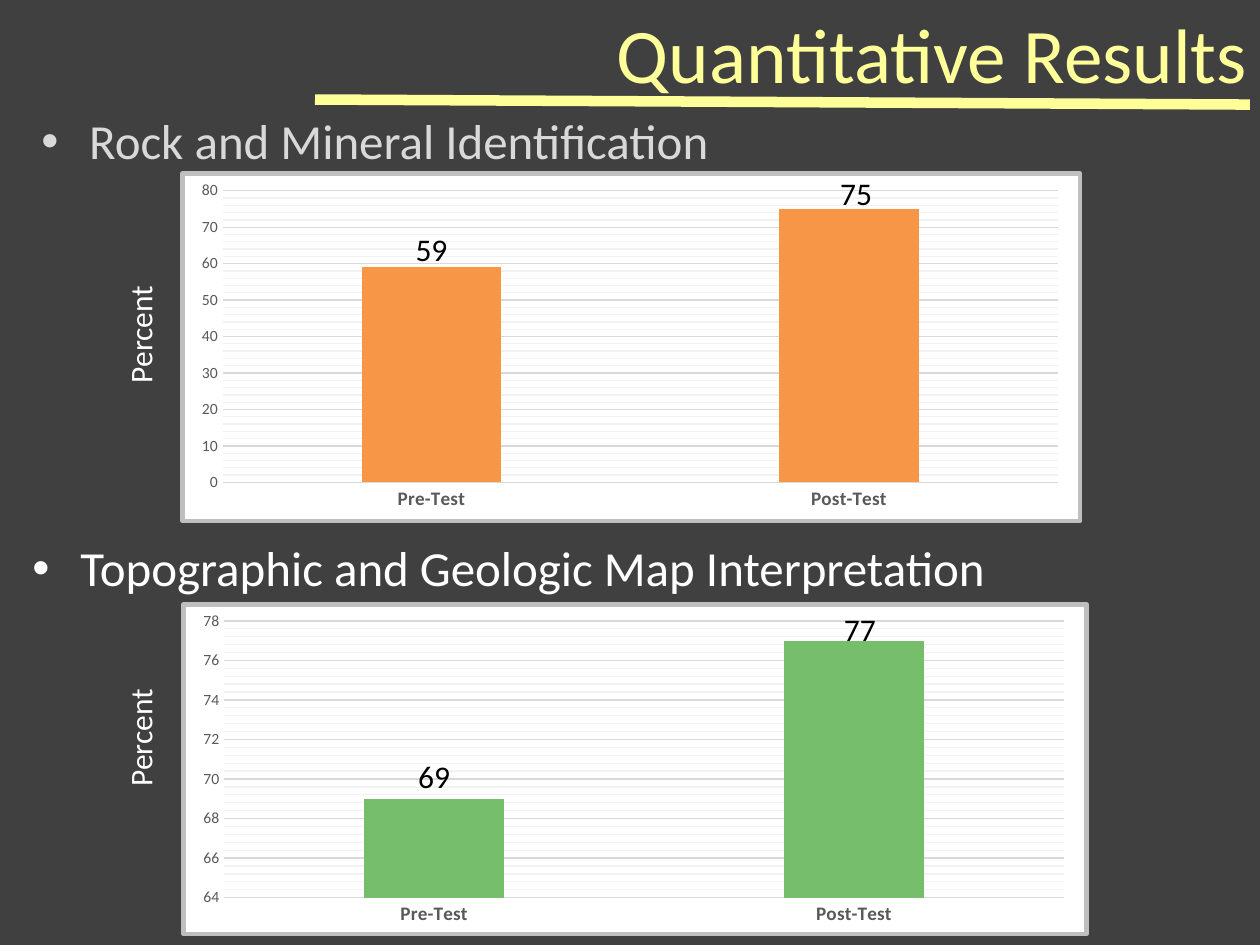
from lxml import etree
from pptx import Presentation, util as u
from pptx.chart.data import CategoryChartData
from pptx.dml.color import RGBColor
from pptx.enum import chart as ch, shapes, text
from pptx.oxml import parse_xml
from pptx.oxml.ns import nsdecls, qn

CHARCOAL = RGBColor(0x40, 0x40, 0x40)
YELLOW = RGBColor(0xFF, 0xFF, 0x99)
WHITE = RGBColor(0xFF, 0xFF, 0xFF)
BLACK = RGBColor(0, 0, 0)
LIGHT_GREY = RGBColor(0xD9, 0xD9, 0xD9)
PALE_GREY = RGBColor(0xF2, 0xF2, 0xF2)
FRAME_GREY = RGBColor(0xBF, 0xBF, 0xBF)
AXIS_GREY = RGBColor(0x59, 0x59, 0x59)
ORANGE = RGBColor(0xF7, 0x96, 0x46)
GREEN = RGBColor(0x76, 0xBE, 0x6C)

COLUMNS, ROWS = 100, 75
CATEGORIES = ("Pre-Test", "Post-Test")
PLOT_SHARES = {"x": 0.045, "y": 0.05, "w": 0.93, "h": 0.84}


def chart_part_style(line_color, line_width, fill=""):
    """Returns a c:spPr element with an outline and an optional fill."""
    return parse_xml(
        f'<c:spPr {nsdecls("c", "a")}>{fill}<a:ln w="{u.Pt(line_width)}">'
        f'<a:solidFill><a:srgbClr val="{line_color}"/></a:solidFill>'
        '</a:ln></c:spPr>')


class ResultsSlide:
    """Builds one slide; every box is (column, row, columns wide, rows high)."""

    font = "Calibri"

    def __init__(self, deck):
        self.cell_w = deck.slide_width / COLUMNS
        self.cell_h = deck.slide_height / ROWS
        self.slide = deck.slides.add_slide(deck.slide_layouts[6])
        backdrop = self.slide.background.fill
        backdrop.solid()
        backdrop.fore_color.rgb = CHARCOAL

    def place(self, *box):
        return [u.Emu(round(value * (self.cell_h if i % 2 else self.cell_w)))
                for i, value in enumerate(box)]

    def set_font(self, font, size, color, bold=False):
        font.name, font.size, font.bold = self.font, u.Pt(size), bold
        font.color.rgb = color

    def words(self, box, wording, size, color, wrap=True):
        """Adds a one-paragraph text box; returns its frame and paragraph."""
        frame = self.slide.shapes.add_textbox(*self.place(*box)).text_frame
        frame.word_wrap = wrap
        if not wrap:
            frame.auto_size = text.MSO_AUTO_SIZE.SHAPE_TO_FIT_TEXT
        paragraph = frame.paragraphs[0]
        run = paragraph.add_run()
        run.text = wording
        self.set_font(run.font, size, color)
        return frame, paragraph

    def title(self, box, wording):
        frame, paragraph = self.words(box, wording, 44.1, YELLOW)
        frame.vertical_anchor = text.MSO_ANCHOR.MIDDLE
        paragraph.alignment = text.PP_ALIGN.RIGHT

    def bullet(self, box, wording, color):
        _, paragraph = self.words(box, wording, 28, color)
        paragraph.space_before = u.Pt(5.6)
        props = paragraph._p.get_or_add_pPr()
        props.set("marL", str(u.Inches(0.38)))
        props.set("indent", str(-u.Inches(0.38)))
        etree.SubElement(props, qn("a:buFont")).set("typeface", "Arial")
        etree.SubElement(props, qn("a:buChar")).set("char", "•")

    def axis_caption(self, box, wording):
        frame, _ = self.words(box, wording, 18, WHITE, wrap=False)
        frame._txBody.bodyPr.set("vert", "vert270")

    def value_label(self, box, value):
        self.words(box, str(value), 18, BLACK, wrap=False)

    def rule(self, start, end):
        line = self.slide.shapes.add_connector(
            shapes.MSO_CONNECTOR.STRAIGHT, *self.place(*start, *end))
        line.line.color.rgb = YELLOW
        line.line.width = u.Pt(6)
        etree.SubElement(line._element.spPr, qn("a:effectLst"))

    def column_chart(self, box, values, color, low, high, step):
        data = CategoryChartData()
        data.categories = CATEGORIES
        data.add_series("Series 1", values)
        chart = self.slide.shapes.add_chart(
            ch.XL_CHART_TYPE.COLUMN_CLUSTERED, *self.place(*box), data).chart
        chart.has_legend = chart.has_title = False
        self.set_font(chart.font, 10, BLACK)

        plot = chart.plots[0]
        plot.gap_width = 199
        plot.vary_by_categories = False
        bars = plot.series[0].format.fill
        bars.solid()
        bars.fore_color.rgb = color

        scale, names = chart.value_axis, chart.category_axis
        scale.minimum_scale, scale.maximum_scale = low, high
        scale.major_unit, scale.minor_unit = step, step / 5
        scale.has_major_gridlines = scale.has_minor_gridlines = True
        for axis in (scale, names):
            axis.major_tick_mark = axis.minor_tick_mark = ch.XL_TICK_MARK.NONE
        for part in (scale.major_gridlines, names):
            part.format.line.color.rgb = LIGHT_GREY
            part.format.line.width = u.Pt(0.75)
        scale.format.line.fill.background()
        self.set_font(scale.tick_labels.font, 9, AXIS_GREY)
        self.set_font(names.tick_labels.font, 11, AXIS_GREY, bold=True)
        self.frame_chart(chart)

    def frame_chart(self, chart):
        """Styles what has no public method: minor grid, plot area and border."""
        body = chart.element.find(qn("c:chart"))
        area = body.find(qn("c:plotArea"))
        minor_grid = next(area.iter(qn("c:minorGridlines")))
        minor_grid.append(chart_part_style(PALE_GREY, 0.75))

        for layout in area.findall(qn("c:layout")):
            area.remove(layout)
        modes = "".join(f'<c:{side}Mode val="edge"/>' for side in "xy")
        shares = "".join(f'<c:{side} val="{share}"/>'
                         for side, share in PLOT_SHARES.items())
        area.insert(0, parse_xml(
            f'<c:layout {nsdecls("c")}><c:manualLayout>'
            f'<c:layoutTarget val="inner"/>{modes}{shares}'
            '</c:manualLayout></c:layout>'))
        back = f'<a:solidFill><a:srgbClr val="{WHITE}"/></a:solidFill>'
        body.addnext(chart_part_style(FRAME_GREY, 2.5, back))


def main():
    deck = Presentation()
    deck.slide_width, deck.slide_height = u.Inches(10), u.Inches(7.5)
    results = ResultsSlide(deck)

    results.bullet((2.3, 8.3, 96.1, 9.2), "Rock and Mineral Identification", LIGHT_GREY)
    results.bullet((1.6, 42.2, 90, 6.2),
                   "Topographic and Geologic Map Interpretation", WHITE)

    panels = (
        ((14.3, 13.6, 71.6, 27.9), (59, 75), ORANGE, (0, 80, 10),
         22.4, ((32, 17.8), (65.7, 13.3))),
        ((14.4, 47.8, 72, 26.5), (69, 77), GREEN, (64, 78, 2),
         54.4, ((32.2, 59.6), (66, 47.9))),
    )
    for box, values, color, scale, caption_row, label_spots in panels:
        results.axis_caption((9.1, caption_row, 5, 9), "Percent")
        results.column_chart(box, values, color, *scale)
        for spot, value in zip(label_spots, values):
            results.value_label((*spot, 4.6, 4), value)

    results.title((35, 0, 65, 8.3), "Quantitative Results")
    results.rule((25, 7.9), (99.2, 8.3))
    deck.save("out.pptx")


if __name__ == "__main__":
    main()
